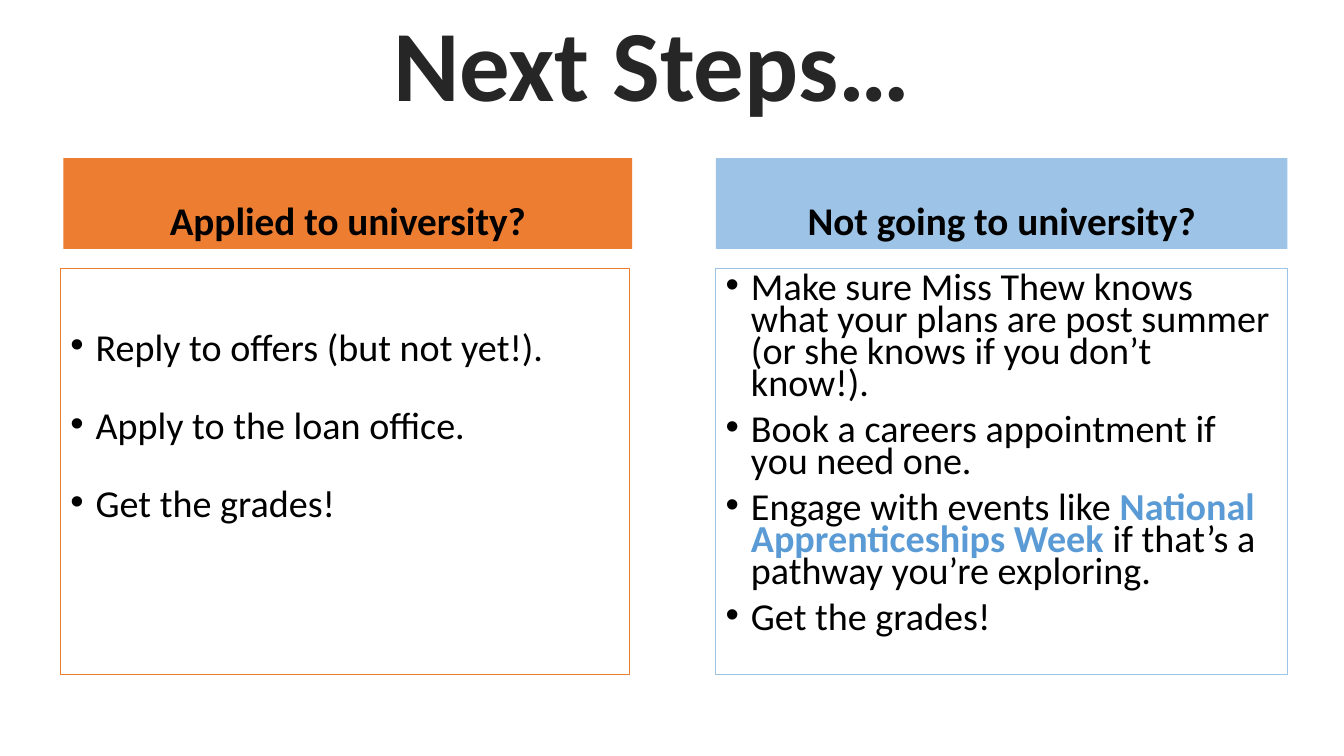
"""Builds the "Next Steps" slide: two headed columns of advice."""
from dataclasses import dataclass

from lxml.etree import SubElement
from pptx import Presentation
from pptx.dml.color import RGBColor
from pptx.enum.shapes import MSO_SHAPE as Shape
from pptx.enum.text import MSO_ANCHOR as Anchor, MSO_AUTO_SIZE as AutoSize, PP_ALIGN as Align
from pptx.oxml.ns import qn
from pptx.util import Inches, Pt


@dataclass(frozen=True)
class Theme:
    """Colours, font and type sizes of the slide."""
    font: str = "Calibri"
    ink: str = "000000"
    title_ink: str = "262626"
    orange: str = "ED7D31"
    blue: str = "9DC3E6"
    accent: str = "5B9BD5"
    title: float = 72
    heading: float = 28
    body: float = 27.2


@dataclass(frozen=True)
class Column:
    """One headed list with its place and rhythm."""
    heading: str
    colour: str
    heading_left: float
    list_left: float
    width: float
    top_inset: float
    gap: float
    items: tuple


THEME = Theme()
WIDTH, HEIGHT = 13.33, 7.5
HEADING_ROW = (1.57, 0.9)
LIST_ROW = (2.66, 4.03)
INDENT = Inches(0.25)

COLUMNS = (
    Column("Applied to university?", THEME.orange, 0.63, 0.6, 5.64, 0.67, 33, (
        ("Reply to offers (but not yet!).",),
        ("Apply to the loan office.",),
        ("Get the grades!",),
    )),
    Column("Not going to university?", THEME.blue, 7.1, 7.1, 5.67, 0.07, 10, (
        ("Make sure Miss Thew knows what your plans are post summer "
         "(or she knows if you don’t know!).",),
        ("Book a careers appointment if you need one.",),
        ("Engage with events like ", "National Apprenticeships Week",
         " if that’s a pathway you’re exploring."),
        ("Get the grades!",),
    )),
)


def add_run(para, text, size, colour=THEME.ink, bold=False):
    """Append a formatted run to a paragraph."""
    run = para.add_run()
    run.text = text
    font = run.font
    font.name, font.size, font.bold = THEME.font, Pt(size), bold
    font.color.rgb = RGBColor.from_string(colour)


def add_box(page, left, row, width, anchor):
    """Add a plain rectangle in a row of the grid."""
    top, height = row
    box = page.shapes.add_shape(
        Shape.RECTANGLE, Inches(left), Inches(top), Inches(width), Inches(height))
    box.shadow.inherit = False
    box.text_frame.word_wrap = True
    box.text_frame.vertical_anchor = anchor
    return box


def add_heading(page, column):
    """Add the filled heading bar of a column."""
    box = add_box(page, column.heading_left, HEADING_ROW, column.width, Anchor.BOTTOM)
    box.fill.solid()
    box.fill.fore_color.rgb = RGBColor.from_string(column.colour)
    box.line.fill.background()
    para = box.text_frame.paragraphs[0]
    para.alignment, para.line_spacing = Align.CENTER, 0.9
    add_run(para, column.heading, THEME.heading, bold=True)


def set_bullet(para):
    """Give a paragraph a hanging round bullet."""
    props = para._p.get_or_add_pPr()
    props.set("marL", str(INDENT))
    props.set("indent", str(-INDENT))
    SubElement(props, qn("a:buFont")).set("typeface", "Arial")
    SubElement(props, qn("a:buChar")).set("char", "•")


def add_list(page, column):
    """Add the outlined bullet list of a column."""
    box = add_box(page, column.list_left, LIST_ROW, column.width, Anchor.TOP)
    box.fill.background()
    box.line.color.rgb = RGBColor.from_string(column.colour)
    box.line.width = Pt(0.75)
    frame = box.text_frame
    frame.margin_top = Inches(column.top_inset)
    for number, item in enumerate(column.items):
        para = frame.add_paragraph() if number else frame.paragraphs[0]
        para.alignment, para.line_spacing = Align.LEFT, 0.7
        para.space_before, para.space_after = Pt(0), Pt(column.gap)
        set_bullet(para)
        for position, text in enumerate(item):
            strong = position % 2 == 1
            add_run(para, text, THEME.body, THEME.accent if strong else THEME.ink, strong)


def set_title(page, text):
    """Place and format the title placeholder."""
    title = page.shapes.title
    title.left, title.top = Inches(3.51), Inches(-0.04)
    title.width, title.height = Inches(5.91), Inches(1.31)
    frame = title.text_frame
    frame.word_wrap, frame.auto_size = False, AutoSize.NONE
    frame.vertical_anchor = Anchor.TOP
    para = frame.paragraphs[0]
    para.alignment, para.line_spacing, para.space_before = Align.CENTER, 1.0, Pt(0)
    add_run(para, text, THEME.title, THEME.title_ink, True)


def main():
    """Build and save the deck."""
    deck = Presentation()
    deck.slide_width, deck.slide_height = Inches(WIDTH), Inches(HEIGHT)
    page = deck.slides.add_slide(deck.slide_layouts.get_by_name("Title Only"))
    set_title(page, "Next Steps…")
    for column in COLUMNS:
        add_heading(page, column)
        add_list(page, column)
    deck.save("out.pptx")


if __name__ == "__main__":
    main()
